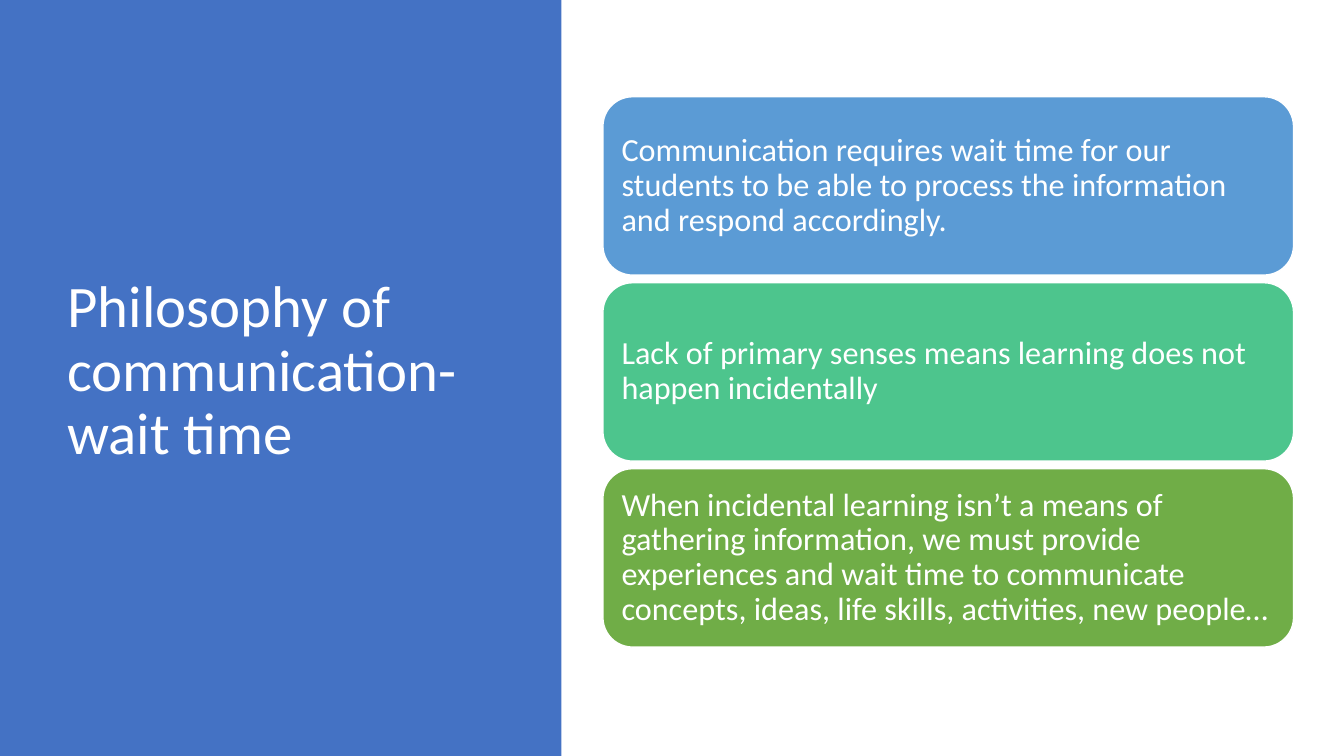
from dataclasses import dataclass

from pptx import Presentation
from pptx.dml.color import RGBColor
from pptx.enum.shapes import MSO_SHAPE as Shape
from pptx.enum.text import MSO_ANCHOR as Anchor, PP_ALIGN as Align
from pptx.util import Inches, Pt


@dataclass(frozen=True)
class Theme:
    font: str = "Calibri"
    title_size: int = 42
    card_size: int = 23
    line_spacing: float = 0.9
    panel: str = "4472C4"
    white: str = "FFFFFF"
    cards: tuple = ("5B9BD5", "4DC58D", "70AD47")


class Deck:
    def __init__(self, prs, theme):
        self.prs = prs
        self.theme = theme
        self.s = prs.slides.add_slide(prs.slide_layouts[6])

    def box(self, x, y, w, h):
        width, height = self.prs.slide_width, self.prs.slide_height
        return [round(share * side / 100) for share, side in
                ((x, width), (y, height), (w, width), (h, height))]

    def shape(self, kind, area, fill, outline=None):
        sp = self.s.shapes.add_shape(kind, *self.box(*area))
        sp.shadow.inherit = False
        sp.fill.solid()
        sp.fill.fore_color.rgb = RGBColor.from_string(fill)
        if outline:
            sp.line.color.rgb = RGBColor.from_string(outline)
            sp.line.width = Pt(1)
        else:
            sp.line.fill.background()
        return sp

    def add_text(self, sp, text, size):
        tf = sp.text_frame
        tf.word_wrap = True
        tf.vertical_anchor = Anchor.MIDDLE
        p = tf.paragraphs[0]
        p.alignment = Align.LEFT
        p.line_spacing = self.theme.line_spacing
        r = p.add_run()
        r.text = text
        r.font.name = self.theme.font
        r.font.size = Pt(size)
        r.font.color.rgb = RGBColor.from_string(self.theme.white)

    def panel(self, area):
        self.shape(Shape.RECTANGLE, area, self.theme.panel)

    def title(self, area, text):
        sp = self.s.shapes.add_textbox(*self.box(*area))
        self.add_text(sp, text, self.theme.title_size)

    def card(self, area, fill, text):
        sp = self.shape(Shape.ROUNDED_RECTANGLE, area, fill, self.theme.white)
        tf = sp.text_frame
        tf.margin_left = tf.margin_right = Inches(0.1)
        tf.margin_top = tf.margin_bottom = Inches(0.1)
        self.add_text(sp, text, self.theme.card_size)

    def cards(self, area, pitch, texts):
        x, y, w, h = area
        for i, (fill, text) in enumerate(zip(self.theme.cards, texts)):
            self.card((x, y + i * pitch, w, h), fill, text)


def main():
    prs = Presentation()
    prs.slide_width, prs.slide_height = Inches(13.33), Inches(7.5)
    deck = Deck(prs, Theme())
    deck.panel((0, 0, 41.78, 100))
    deck.title((4.28, 9.07, 31.2, 80.27), "Philosophy of communication-wait time")
    deck.cards((44.86, 12.8, 51.39, 23.6), 24.6, (
        "Communication requires wait time for our students to be able "
        "to process the information and respond accordingly.",
        "Lack of primary senses means learning does not happen incidentally",
        "When incidental learning isn’t a means of gathering information, "
        "we must provide experiences and wait time to communicate concepts, "
        "ideas, life skills, activities, new people…",
    ))
    prs.save("out.pptx")


if __name__ == "__main__":
    main()
